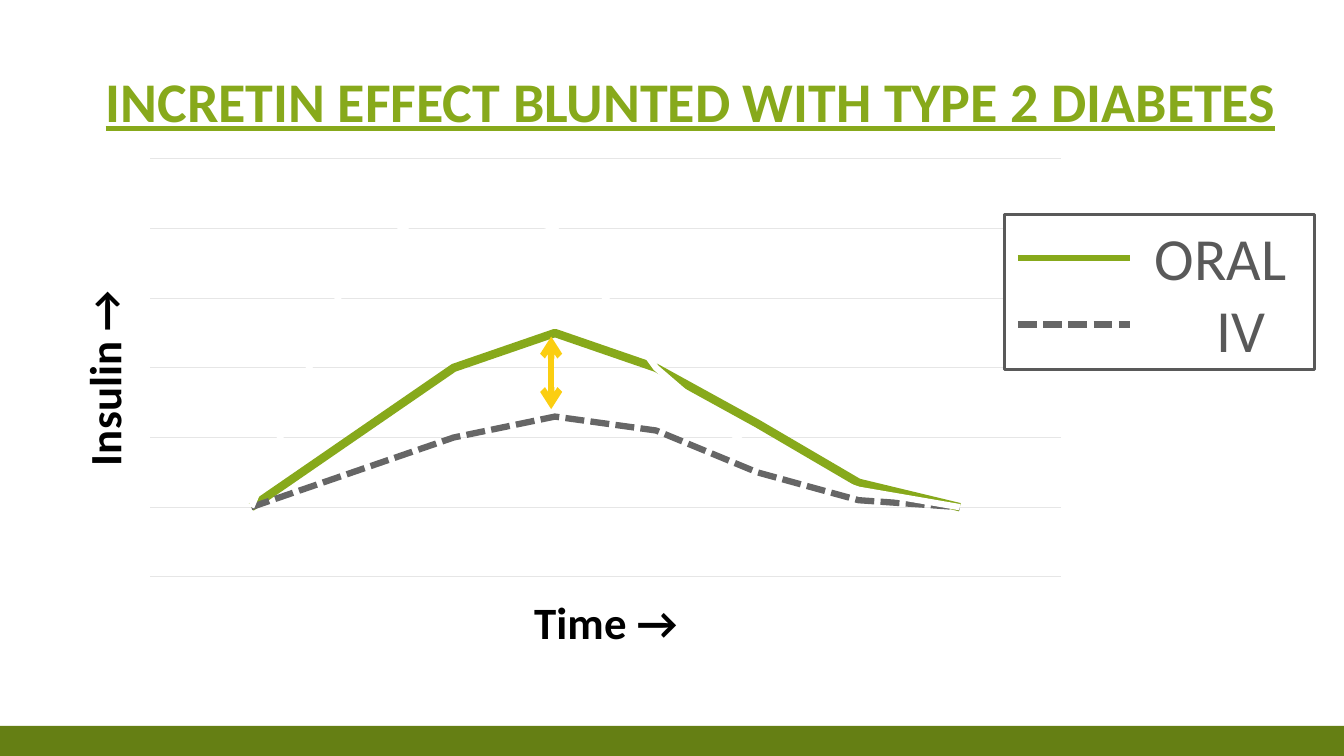
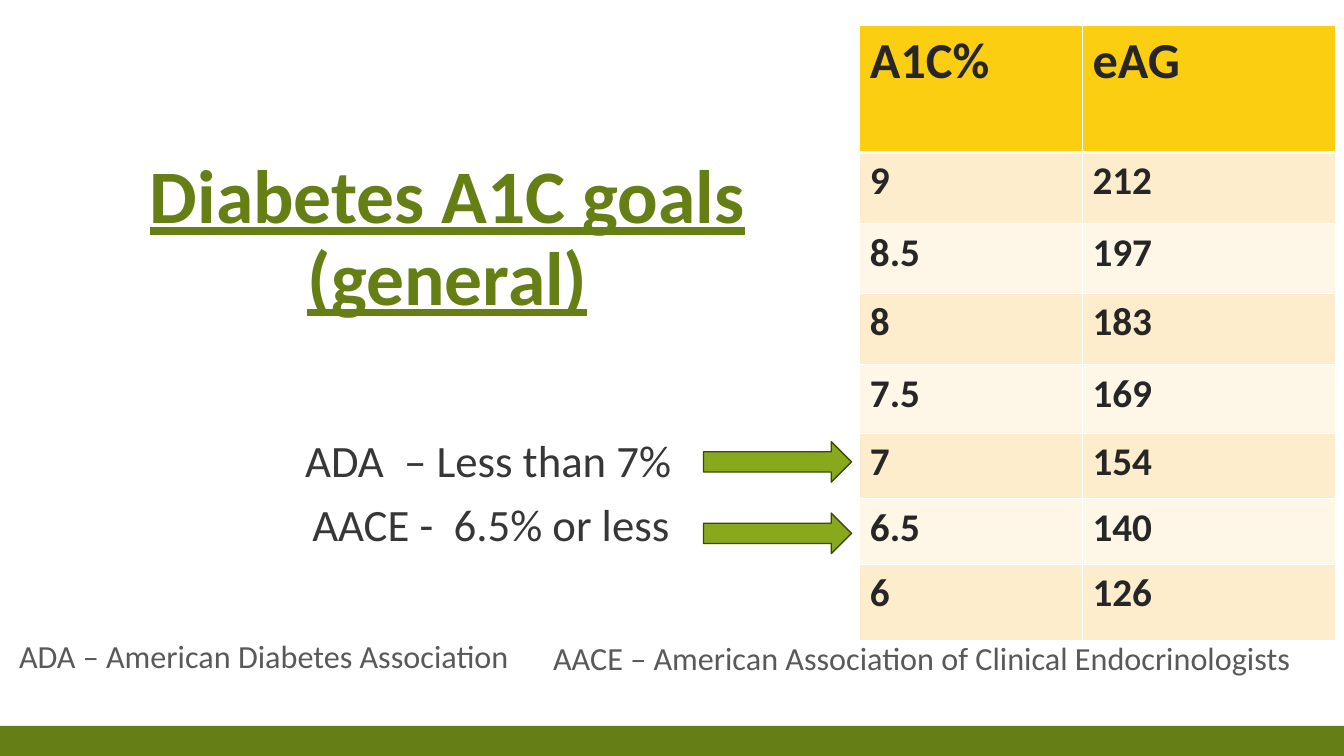
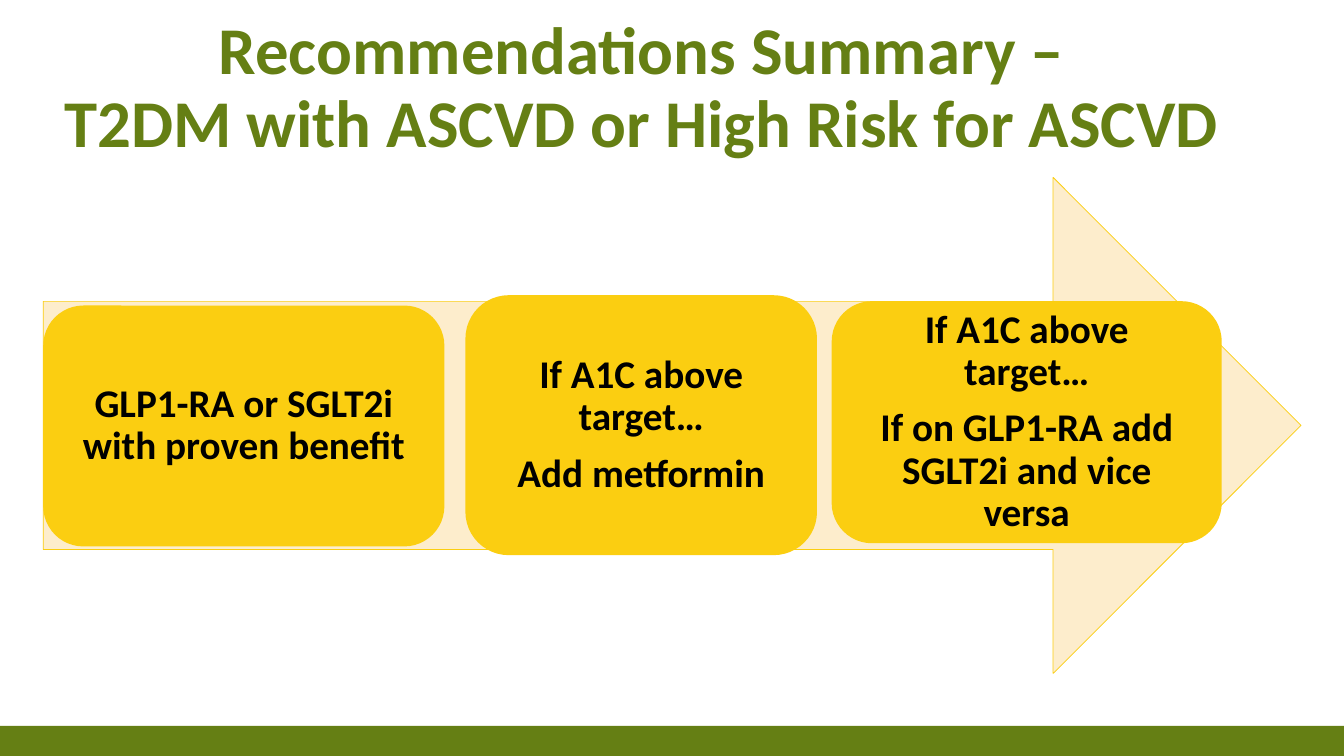
from lxml import etree
from pptx import Presentation
from pptx.chart.data import XyChartData
from pptx.dml.color import RGBColor
from pptx.enum.chart import XL_CHART_TYPE
from pptx.enum.dml import MSO_LINE
from pptx.enum.shapes import MSO_CONNECTOR, MSO_SHAPE
from pptx.enum.text import MSO_ANCHOR, PP_ALIGN
from pptx.oxml.ns import qn
from pptx.util import Cm, Pt

RECT = MSO_SHAPE.RECTANGLE
ROUND = MSO_SHAPE.ROUNDED_RECTANGLE
ARROW = MSO_SHAPE.RIGHT_ARROW
LINE = MSO_CONNECTOR.STRAIGHT
DASH = MSO_LINE.SQUARE_DOT
SMOOTH = XL_CHART_TYPE.XY_SCATTER_SMOOTH_NO_MARKERS
LEFT, MID = PP_ALIGN.LEFT, PP_ALIGN.CENTER
BASE, CORE = MSO_ANCHOR.BOTTOM, MSO_ANCHOR.MIDDLE
FONT = "Calibri"
COLORS = {
    "white": "FFFFFF", "black": "000000", "green": "87A91B",
    "moss": "657F14", "pine": "3B4A0C", "gold": "FBCE11",
    "sand": "FDEDCC", "cream": "FEF6E7", "gray": "666666",
    "slate": "595959", "coal": "373737", "ink": "262626", "mist": "E6E6E6",
}


def tint(name):
    return RGBColor.from_string(COLORS[name])


def style(font, size, color, bold=False, under=False):
    font.name = FONT
    font.size = Pt(size)
    font.bold = bold
    font.underline = under
    font.color.rgb = tint(color)


def write(para, text, size, color, bold=False, under=False):
    for index, part in enumerate(text.split("\n")):
        if index:
            para.add_line_break()
        run = para.add_run()
        run.text = part
        style(run.font, size, color, bold, under)


def stroke(line, color, width, dash=None):
    line.color.rgb = tint(color)
    line.width = Pt(width)
    if dash:
        line.dash_style = dash


def add_page(deck):
    return deck.slides.add_slide(deck.slide_layouts[5])


def add_title(page, box, text, size, color, align=MID, under=False, low=0.13, right=0.25):
    shape = page.shapes.title
    shape.left, shape.top, shape.width, shape.height = map(Cm, box)
    frame = shape.text_frame
    frame.word_wrap = True
    frame.vertical_anchor = BASE
    frame.margin_bottom, frame.margin_right = Cm(low), Cm(right)
    para = frame.paragraphs[0]
    para.alignment = align
    para.line_spacing = 0.9
    write(para, text, size, color, True, under)


def add_text(page, box, text, size, color):
    frame = page.shapes.add_textbox(*map(Cm, box)).text_frame
    frame.word_wrap = True
    write(frame.paragraphs[0], text, size, color)


def add_form(page, kind, box, fill, edge=None, width=1):
    shape = page.shapes.add_shape(kind, *map(Cm, box))
    shape.shadow.inherit = False
    shape.fill.solid()
    shape.fill.fore_color.rgb = tint(fill)
    if edge:
        stroke(shape.line, edge, width)
    else:
        shape.line.fill.background()
    return shape


def add_line(page, ends, color, dash=None, heads=False):
    line = page.shapes.add_connector(LINE, *map(Cm, ends))
    stroke(line.line, color, 4.5, dash)
    if heads:
        pen = line.line._get_or_add_ln()
        for name in ("a:headEnd", "a:tailEnd"):
            etree.SubElement(pen, qn(name)).set("type", "arrow")
    etree.SubElement(line._element.spPr, qn("a:effectLst"))


def add_band(deck, page):
    band = add_form(page, RECT, (0, 18.29, 33.87, 0.76), "moss")
    deck.slide_master.shapes._spTree.insert(2, band._element)


def place(node, spot, inner=False, **parts):
    old = node.find(qn("c:layout"))
    if old is not None:
        node.remove(old)
    frame = etree.Element(qn("c:layout"))
    node.insert(spot, frame)
    rules = etree.SubElement(frame, qn("c:manualLayout"))
    if inner:
        etree.SubElement(rules, qn("c:layoutTarget")).set("val", "inner")
    for key in ("x", "y"):
        etree.SubElement(rules, qn(f"c:{key}Mode")).set("val", "edge")
    for key, value in parts.items():
        etree.SubElement(rules, qn(f"c:{key}")).set("val", str(value))


def set_axis(axis, text, top, step, x, y):
    axis.minimum_scale, axis.maximum_scale = 0, top
    axis.major_unit = step
    axis.has_major_gridlines = False
    axis.visible = False
    title = axis.axis_title
    write(title.text_frame.paragraphs[0], text, 32, "black", True)
    place(title._element, 1, x=x, y=y)


def add_curves(page, box, curves):
    data = XyChartData()
    for index, curve in enumerate(curves, 1):
        series = data.add_series(f"Series {index}")
        for time, level in enumerate(curve[0], 1):
            series.add_data_point(time, level)
    chart = page.shapes.add_chart(SMOOTH, *map(Cm, box), data).chart
    chart.has_title = chart.has_legend = False
    style(chart.font, 10, "slate")
    set_axis(chart.category_axis, "Time →", 9, 1, 0.43, 0.81)
    axis = chart.value_axis
    set_axis(axis, "Insulin →", 120, 20, 0.03, 0.31)
    axis.has_major_gridlines = True
    stroke(axis.major_gridlines.format.line, "mist", 0.75)
    turn = axis.axis_title.text_frame._txBody.bodyPr
    turn.set("rot", "-5400000")
    turn.set("vert", "horz")
    plot = chart.plots[0]
    plot.vary_by_categories = False
    for series, (_, color, width, dash) in zip(plot.series, curves):
        series.smooth = True
        stroke(series.format.line, color, width, dash)
    area = chart._chartSpace.chart.plotArea
    place(area, 0, True, x=0.104, y=0.105, w=0.79, h=0.695)


def add_key(page):
    shape = add_form(page, RECT, (25.32, 5.41, 7.8, 3.91), "white", "slate", 2.25)
    frame = shape.text_frame
    frame.vertical_anchor = CORE
    for index, (text, inset) in enumerate((("ORAL", 3.53), ("IV", 5.08))):
        para = frame.add_paragraph() if index else frame.paragraphs[0]
        para.alignment = LEFT
        para._p.get_or_add_pPr().set("marL", str(Cm(inset)))
        write(para, text, 42.7, "slate")
    for y, color, dash in ((6.5, "green", None), (8.18, "gray", DASH)):
        add_line(page, (25.65, y, 28.47, y), color, dash)


def edge_cell(cell, low):
    props = cell._tc.get_or_add_tcPr()
    for index, side in enumerate("LRTB"):
        line = etree.Element(qn(f"a:ln{side}"), w=str(Pt(low if side == "B" else 1)))
        fill = etree.SubElement(line, qn("a:solidFill"))
        etree.SubElement(fill, qn("a:srgbClr")).set("val", COLORS["white"])
        props.insert(index, line)


def add_grid(page, spot, cols, highs, rows):
    size = sum(cols), sum(highs)
    grid = page.shapes.add_table(len(rows), len(cols), *map(Cm, spot + size)).table
    for col, width in zip(grid.columns, cols):
        col.width = Cm(width)
    for r, (high, row) in enumerate(zip(highs, rows)):
        grid.rows[r].height = Cm(high)
        fill = ("sand" if r % 2 else "cream") if r else "gold"
        for c, text in enumerate(row):
            cell = grid.cell(r, c)
            cell.fill.solid()
            cell.fill.fore_color.rgb = tint(fill)
            edge_cell(cell, 1 if r else 3)
            write(cell.text_frame.paragraphs[0], text, 28 if r else 36, "ink", True)


def add_step(page, box, lines):
    frame = add_form(page, ROUND, box, "gold").text_frame
    frame.word_wrap = True
    frame.vertical_anchor = CORE
    frame.margin_left = frame.margin_right = Cm(0.6)
    frame.margin_top = frame.margin_bottom = Cm(0.6)
    for index, text in enumerate(lines):
        para = frame.add_paragraph() if index else frame.paragraphs[0]
        para.alignment = MID
        para.line_spacing = 0.9
        para.space_after = Pt(10)
        write(para, text, 28, "black", True)


def draw_effect(page):
    add_title(page, (2.41, 0.53, 30.33, 3), "INCRETIN EFFECT BLUNTED WITH TYPE 2 DIABETES",
              40, "green", LEFT, True)
    add_curves(page, (0.76, 2.41, 29.06, 15.16), (
        ((20, 90, 110, 100, 60, 35, 25, 20), "white", 4.5, None),
        ((20, 30, 40, 46, 42, 30, 22, 20), "gray", 4.5, DASH),
        ((20, 40, 60, 70, 60, 44, 27, 20), "green", 6, None),
    ))
    add_key(page)
    add_line(page, (13.89, 10.31, 13.89, 8.48), "gold", heads=True)


def draw_goals(page):
    add_grid(page, (21.67, 0.64), (5.61, 6.38),
             (3.2, 1.8, 1.75, 1.8, 1.73, 1.65, 1.65, 1.93),
             (("A1C%", "eAG"), ("9", "212"), ("8.5", "197"), ("8", "183"),
              ("7.5", "169"), ("7", "154"), ("6.5", "140"), ("6", "126")))
    add_title(page, (0.91, 5.84, 20.73, 3.68), "Diabetes A1C goals (general)",
              54, "moss", under=True, low=1.42)
    add_text(page, (7.44, 10.77, 10.92, 1.63), "ADA  – Less than 7%", 32, "coal")
    add_text(page, (7.62, 12.4, 10.21, 1.63), "AACE -  6.5% or less", 32, "coal")
    for top in (11.13, 12.93):
        add_form(page, ARROW, (17.73, top, 3.73, 1.02), "green", "pine")
    add_text(page, (0.23, 15.9, 17.4, 1.27), "ADA – American Diabetes Association", 23, "slate")
    add_text(page, (13.69, 15.95, 19.96, 1.24),
             "AACE – American Association of Clinical Endocrinologists", 23, "slate")


def draw_steps(page):
    add_title(page, (0.76, 2.67, 31.34, 3),
              "Recommendations Summary –\nT2DM with ASCVD or High Risk for ASCVD",
              47.7, "moss", low=1.6, right=0.76)
    add_form(page, ARROW, (1.09, 4.47, 31.7, 12.5), "sand", "gold", 0.5)
    add_step(page, (1.09, 7.7, 10.11, 6.07), ("GLP1-RA or SGLT2i with proven benefit",))
    add_step(page, (11.73, 7.44, 8.86, 6.55), ("If A1C above target…", "Add metformin"))
    add_step(page, (20.96, 7.59, 9.83, 6.1),
             ("If A1C above target…", "If on GLP1-RA add SGLT2i and vice versa"))


def main():
    deck = Presentation()
    deck.slide_width, deck.slide_height = Cm(33.87), Cm(19.05)
    for index, draw in enumerate((draw_effect, draw_goals, draw_steps)):
        page = add_page(deck)
        if not index:
            add_band(deck, page)
        draw(page)
    deck.save("out.pptx")


if __name__ == "__main__":
    main()
